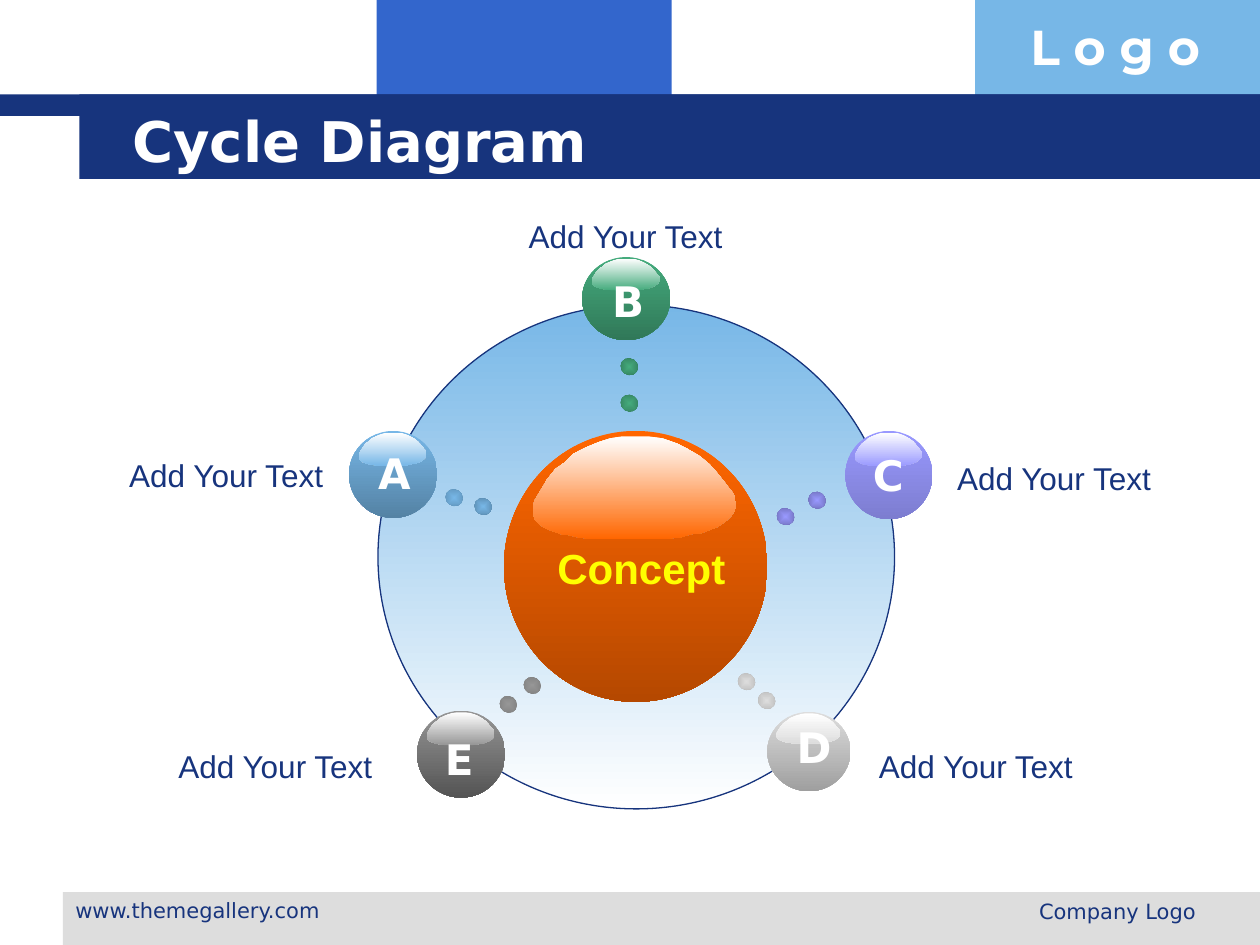
from dataclasses import dataclass

from lxml import etree
from pptx import Presentation
from pptx.dml.color import RGBColor
from pptx.enum.shapes import MSO_SHAPE
from pptx.enum.text import MSO_ANCHOR, PP_ALIGN
from pptx.oxml.ns import qn
from pptx.util import Inches, Pt

RECTANGLE = MSO_SHAPE.RECTANGLE
OVAL = MSO_SHAPE.OVAL
LEFT, CENTER, RIGHT = PP_ALIGN.LEFT, PP_ALIGN.CENTER, PP_ALIGN.RIGHT
TOP, MIDDLE = MSO_ANCHOR.TOP, MSO_ANCHOR.MIDDLE

COLUMNS, ROWS = 100, 75
WIDTH, HEIGHT = Inches(10), Inches(7.5)
CELL = WIDTH / COLUMNS
BODY_FONT, HEAD_FONT, LOGO_FONT = "Arial", "DejaVu Sans", "Montserrat"

COLORS = {
    "navy": "17347D", "blue": "3366CC", "sky": "77B7E7", "silver": "DDDDDD",
    "white": "FFFFFF", "yellow": "FFFF00", "orange": "FF6600",
    "green": "45AB7D", "violet": "9999FF", "gray": "969696",
}

GLOSS_OUTLINE = [
    (99, 56), (100, 67), (99.5, 72), (98, 77), (96, 81), (94, 84), (91, 88),
    (87, 91), (83, 94), (78, 95), (73, 98), (68, 99), (60, 100), (36, 100),
    (26, 99), (22, 98), (18, 96), (14, 95), (11, 93), (7, 90), (5, 88),
    (3, 85), (1, 81), (0.5, 78), (0, 73), (0, 68), (1, 62), (4, 52), (7, 42),
    (11, 32), (16, 25), (20, 17), (26, 11), (32, 6), (38, 2), (44, 0), (50, 0),
    (57, 0), (64, 2), (71, 7), (76, 12), (82, 19), (87, 27), (91, 36), (95, 46),
]


@dataclass
class Node:
    letter: str
    color: str
    shade: float
    ball: tuple
    letter_box: tuple
    dots: list
    label_at: tuple


NODES = [
    Node("B", "green", 0.45, (46.2, 20.4, 7, 6.6), (47.6, 21.4, 4.5, 5),
         [(49.3, 28.4, 0.47), (49.3, 31.3, 0.5)], (40, 16.7)),
    Node("E", "gray", 0.27, (33.1, 56.4, 7, 6.9), (34.3, 57.7, 4.3, 5),
         [(39.7, 55.2, 0.69), (41.6, 53.7, 0.69)], (12.2, 58.8)),
    Node("C", "violet", 0.63, (67.1, 34.2, 6.9, 7), (68.3, 35.2, 4.4, 5),
         [(64.2, 39, 0.45), (61.7, 40.3, 0.45)], (74, 35.9)),
    Node("D", "silver", 0.47, (60.9, 56.5, 6.6, 6.3), (62.2, 56.8, 4.8, 5),
         [(60.2, 54.9, 0.67), (58.6, 53.4, 0.67)], (67.8, 58.8)),
    Node("A", "sky", 0.46, (27.7, 34.2, 7, 6.9), (29, 35, 4.6, 5),
         [(35.4, 38.8, 0.59), (37.7, 39.5, 0.5)], (8.3, 35.7)),
]


def rgb(name):
    return RGBColor.from_string(COLORS[name])


def grid(box):
    return [round(cells * CELL) for cells in box]


def add_block(slide, geometry, box, color=None):
    block = slide.shapes.add_shape(geometry, *grid(box))
    block.shadow.inherit = False
    block.line.fill.background()
    if color:
        block.fill.solid()
        block.fill.fore_color.rgb = rgb(color)
    return block


def blend(block, start, end, shade=None, radial=False):
    block.fill.gradient()
    for stop, color, position in zip(block.fill.gradient_stops, (start, end), (0, 1)):
        stop.color.rgb = rgb(color)
        stop.position = position
    gradient = block._element.spPr.find(qn("a:gradFill"))
    if shade:
        last_color = gradient.findall(".//" + qn("a:srgbClr"))[-1]
        etree.SubElement(last_color, qn("a:shade"), val=str(round(shade * 100000)))
    if radial:
        gradient.remove(gradient.find(qn("a:lin")))
        radius = etree.SubElement(gradient, qn("a:path"), path="shape")
        etree.SubElement(radius, qn("a:fillToRect"),
                         dict.fromkeys("ltrb", "50000"))
    else:
        block.fill.gradient_angle = 270


def add_text(slide, text, box, size=18, font=BODY_FONT, color="navy", bold=False,
             align=LEFT, anchor=TOP, wrap=True, indent=1):
    holder = slide.shapes.add_textbox(*grid(box))
    frame = holder.text_frame
    frame.word_wrap = wrap
    frame.vertical_anchor = anchor
    frame.margin_left = round(indent * CELL)
    paragraph = frame.paragraphs[0]
    paragraph.alignment = align
    run = paragraph.add_run()
    run.text = text
    run.font.size = Pt(size)
    run.font.name = font
    run.font.bold = bold
    run.font.color.rgb = rgb(color)


def add_gloss(slide, ball, color):
    left, top, width, height = ball
    points = [grid((left + width * (0.11 + 0.77 * x / 100),
                    top + height * (0.02 + 0.38 * y / 100)))
              for x, y in GLOSS_OUTLINE]
    builder = slide.shapes.build_freeform(*points[0])
    builder.add_line_segments(points[1:], close=True)
    gloss = builder.convert_to_shape()
    gloss.shadow.inherit = False
    gloss.line.fill.background()
    blend(gloss, "white", color)


def add_ball(slide, ball, color, shade):
    blend(add_block(slide, OVAL, ball), color, color, shade)
    add_gloss(slide, ball, color)


def add_dot(slide, left, top, color, shade):
    dot = add_block(slide, OVAL, (left, top, 1.3, 1.4))
    dot.rotation = 303.8
    blend(dot, color, color, shade, radial=True)


def add_node(slide, node):
    add_ball(slide, node.ball, node.color, node.shade)
    add_text(slide, node.letter, node.letter_box, size=24, font=HEAD_FONT,
             color="white", bold=True, align=CENTER, wrap=False)
    for left, top, shade in node.dots:
        add_dot(slide, left, top, node.color, shade)
    add_text(slide, "Add Your Text", (*node.label_at, 19.3, 4), align=CENTER)


def add_frame(slide):
    for box, color in [
        ((29.9, 0, 23.4, 9.2), "blue"),
        ((77.4, 0, 22.6, 9.2), "sky"),
        ((5, 70.8, 95, 4.2), "silver"),
        ((0, 7.5, COLUMNS, 1.7), "navy"),
        ((6.3, 7.5, 93.7, 6.7), "navy"),
    ]:
        add_block(slide, RECTANGLE, box, color)
    add_text(slide, "L o g o", (80.8, 0.8, 19.3, 5.7), size=28, font=LOGO_FONT,
             color="white", bold=True)
    add_text(slide, "www.themegallery.com", (5, 70.7, 23.3, 3.5), size=12,
             font=HEAD_FONT)
    add_text(slide, "Company Logo", (64.2, 70.8, 31.7, 3.5), size=12,
             font=HEAD_FONT, align=RIGHT)
    add_text(slide, "Cycle Diagram", (8, 8, 85.3, 6.2), size=32, font=HEAD_FONT,
             color="white", bold=True, anchor=MIDDLE, indent=2.5)


def add_hub(slide):
    ring = add_block(slide, OVAL, (30, 24.2, 41, 40))
    blend(ring, "sky", "white")
    ring.line.color.rgb = rgb("navy")
    ring.line.width = Pt(0.75)
    add_ball(slide, (40, 34.2, 20.9, 21.5), "orange", 0.46)
    add_text(slide, "Concept", (43.2, 42.6, 15.4, 5), size=24, color="yellow",
             bold=True, align=CENTER, wrap=False)


def main():
    deck = Presentation()
    deck.slide_width, deck.slide_height = WIDTH, HEIGHT
    slide = deck.slides.add_slide(deck.slide_layouts[6])
    add_frame(slide)
    add_hub(slide)
    for node in NODES:
        add_node(slide, node)
    deck.save("out.pptx")


if __name__ == "__main__":
    main()
